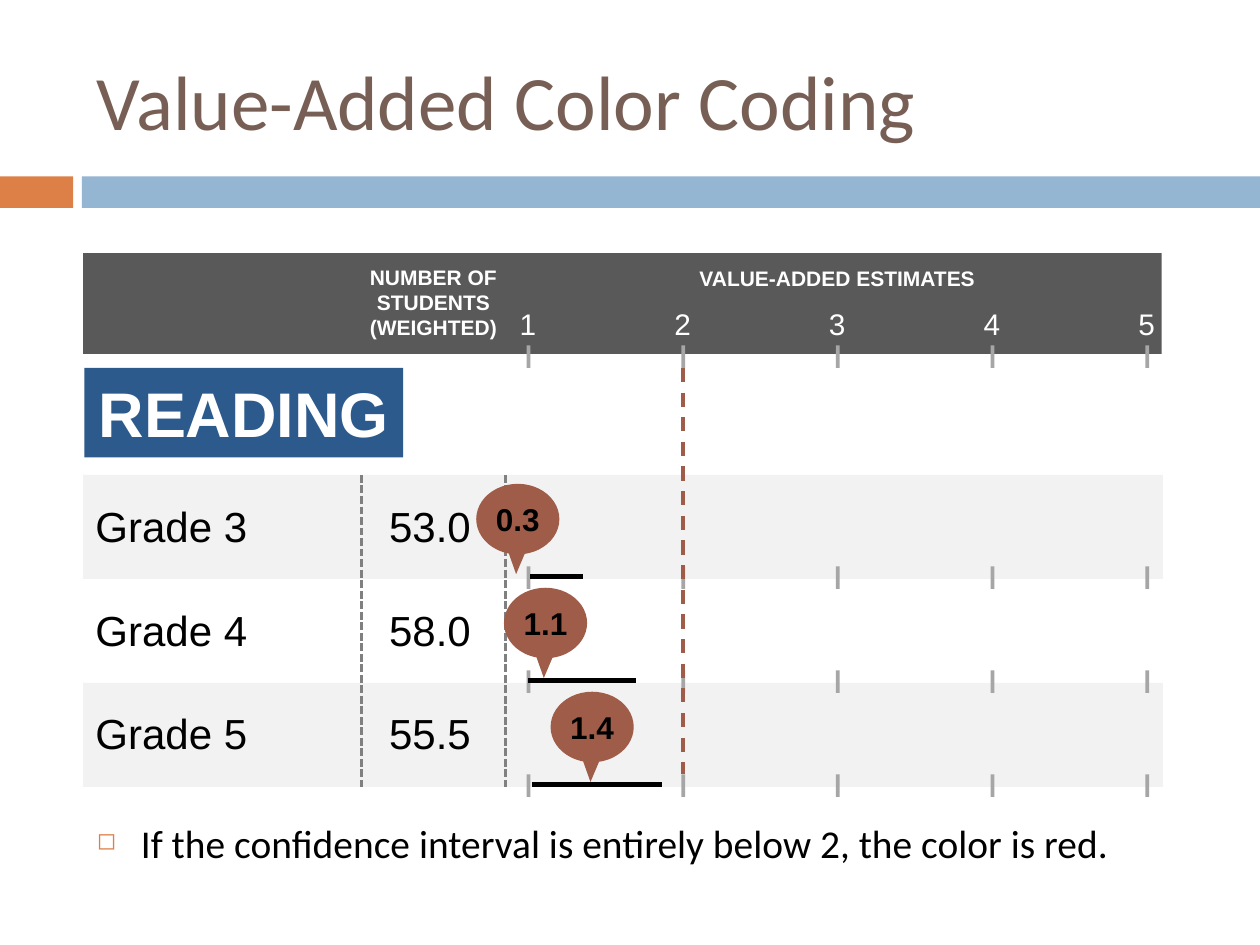
"""Build the value-added color coding slide."""
from lxml.etree import SubElement
from pptx import Presentation
from pptx.dml.color import RGBColor
from pptx.enum.dml import MSO_LINE_DASH_STYLE as Dash
from pptx.enum.shapes import MSO_CONNECTOR as Connector, MSO_SHAPE as Shape
from pptx.enum.text import MSO_ANCHOR as Anchor, PP_ALIGN as Align
from pptx.oxml.ns import qn
from pptx.util import Inches, Pt

WHITE, BLACK = RGBColor(255, 255, 255), RGBColor(0, 0, 0)
BROWN, ORANGE = RGBColor(0x77, 0x5F, 0x55), RGBColor(0xDD, 0x80, 0x47)
SKY, NAVY = RGBColor(0x94, 0xB6, 0xD2), RGBColor(0x2C, 0x5A, 0x8C)
CHARCOAL, PALE = RGBColor(0x59, 0x59, 0x59), RGBColor(0xF2, 0xF2, 0xF2)
TICK_GREY, RULE_GREY = RGBColor(0xA6, 0xA6, 0xA6), RGBColor(0x80, 0x80, 0x80)
RED = RGBColor(0x9F, 0x5C, 0x49)

TITLE = "Value-Added Color Coding"
SUBJECT = "READING"
STUDENTS_HEAD = ["NUMBER OF", "STUDENTS", "(WEIGHTED)"]
ESTIMATES_HEAD = "VALUE-ADDED ESTIMATES"
SCALE = ["1", "2", "3", "4", "5"]
GRADES = [
    {"name": "Grade 3", "students": "53.0", "estimate": "0.3", "callout": 3.78, "interval": (4.21, 4.63)},
    {"name": "Grade 4", "students": "58.0", "estimate": "1.1", "callout": 4.00, "interval": (4.19, 5.05)},
    {"name": "Grade 5", "students": "55.5", "estimate": "1.4", "callout": 4.37, "interval": (4.22, 5.25)},
]
NOTE = "If the confidence interval is entirely below 2, the color is red."

BANDS = [
    ((0, 1.4, 0.58, 0.25), ORANGE),
    ((0.65, 1.4, 9.35, 0.25), SKY),
    ((0.66, 2.01, 8.56, 0.8), CHARCOAL),
]
DIVIDERS = [2.87, 4.01]
TABLE_LEFT, TABLE_WIDTH = 0.66, 8.57
ROWS_TOP, ROW_PITCH = 3.77, 1.65 / 2
TICK_LEFT, TICK_STEP = 4.18, 4.91 / 4
HEADER_TICK_TOP = 2.74

HEAD_FONT = {"size": Pt(12), "name": "Arial", "bold": True}
SCALE_FONT = {"size": Pt(17), "name": "Arial"}
GRADE_FONT = {"size": Pt(24), "name": "Arial"}
SUBJECT_FONT = {"size": Pt(36), "name": "Arial", "bold": True}
ESTIMATE_FONT = {"size": Pt(18), "name": "Arial", "bold": True}
TITLE_FONT = {"size": Pt(44), "name": "Calibri"}
NOTE_FONT = {"size": Pt(22.5), "name": "Calibri"}


def write(shape, lines, font, color, align=Align.LEFT, anchor=Anchor.TOP, wrap=True):
    frame = shape.text_frame
    frame.word_wrap, frame.vertical_anchor = wrap, anchor
    for index, line in enumerate(lines):
        para = frame.add_paragraph() if index else frame.paragraphs[0]
        para.alignment = align
        span = para.add_run()
        span.text = line
        for key, value in font.items():
            setattr(span.font, key, value)
        span.font.color.rgb = color


def add_text(page, place, lines, font, color, **layout):
    box = page.shapes.add_textbox(*map(Inches, place))
    write(box, lines, font, color, **layout)
    return box


def add_block(page, place, fill, kind=Shape.RECTANGLE):
    block = page.shapes.add_shape(kind, *map(Inches, place))
    block.shadow.inherit = False
    block.fill.solid()
    block.fill.fore_color.rgb = fill
    block.line.fill.background()
    return block


def add_line(page, ends, color, width, dash=None):
    line = page.shapes.add_connector(Connector.STRAIGHT, *map(Inches, ends))
    line.line.color.rgb = color
    line.line.width = Pt(width)
    if dash:
        line.line.dash_style = dash
    SubElement(line.element.spPr, qn("a:effectLst"))
    return line


def add_ticks(page, top):
    return [
        add_block(page, (TICK_LEFT + TICK_STEP * index, top, 0.03, 0.18), TICK_GREY)
        for index in range(len(SCALE))
    ]


def add_header(page):
    for place, fill in BANDS:
        add_block(page, place, fill)
    add_text(page, (0.67, 0.25, 8.92, 1.08), [TITLE], TITLE_FONT, BROWN, anchor=Anchor.MIDDLE)
    subject = add_block(page, (0.67, 2.92, 2.53, 0.71), NAVY)
    write(subject, [SUBJECT], SUBJECT_FONT, WHITE, align=Align.CENTER)
    centred = {"align": Align.CENTER, "wrap": False}
    add_text(page, (2.83, 2.05, 1.22, 0.71), STUDENTS_HEAD, HEAD_FONT, WHITE, **centred)
    add_text(page, (5.44, 2.06, 2.41, 0.3), [ESTIMATES_HEAD], HEAD_FONT, WHITE, **centred)
    for index, number in enumerate(SCALE):
        left = TICK_LEFT - 0.16 + TICK_STEP * index
        add_text(page, (left, 2.38, 0.34, 0.39), [number], SCALE_FONT, WHITE, **centred)


def add_grades(page):
    tops = [ROWS_TOP + ROW_PITCH * index for index in range(len(GRADES))]
    for top in tops[::2]:
        add_block(page, (TABLE_LEFT, top, TABLE_WIDTH, ROW_PITCH), PALE)
    for x in DIVIDERS:
        add_line(page, (x, ROWS_TOP, x, tops[-1] + ROW_PITCH), RULE_GREY, 1.5, Dash.SQUARE_DOT)
    header_ticks = add_ticks(page, HEADER_TICK_TOP)
    for top, grade in zip(tops, GRADES):
        row_ticks = add_ticks(page, top + ROW_PITCH - 0.1)
        add_text(page, (TABLE_LEFT, top + 0.15, 2.06, 0.5), [grade["name"]], GRADE_FONT, BLACK)
        add_text(page, (2.99, top + 0.15, 0.87, 0.5), [grade["students"]], GRADE_FONT, BLACK)

    target = add_line(page, (5.42, 2.92, 5.42, 6.15), RED, 2, Dash.DASH)
    goal = SCALE.index("2")
    target.begin_connect(header_ticks[goal], 2)
    target.end_connect(row_ticks[goal], 0)

    for top, grade in zip(tops, GRADES):
        start, end = grade["interval"]
        y = top + ROW_PITCH - 0.02
        add_line(page, (start, y, end, y), BLACK, 3)
        place = (grade["callout"], top + 0.07, 0.66, 0.56)
        callout = add_block(page, place, RED, Shape.OVAL_CALLOUT)
        callout.adjustments[0], callout.adjustments[1] = -0.02, 0.78
        for side in ("left", "top", "right", "bottom"):
            setattr(callout.text_frame, f"margin_{side}", 0)
        write(callout, [grade["estimate"]], ESTIMATE_FONT, BLACK, Align.CENTER, Anchor.MIDDLE)


def add_note(page):
    box = add_text(page, (0.67, 6.45, 8.92, 0.41), [NOTE], NOTE_FONT, BLACK)
    props = box.text_frame.paragraphs[0]._p.get_or_add_pPr()
    props.set("marL", str(Inches(0.35)))
    props.set("indent", str(-Inches(0.35)))
    color = SubElement(props, qn("a:buClr"))
    SubElement(color, qn("a:srgbClr"), val=str(ORANGE))
    SubElement(props, qn("a:buSzPct"), val="60000")
    SubElement(props, qn("a:buChar"), char="◻")


def main():
    deck = Presentation()
    deck.slide_width, deck.slide_height = Inches(10), Inches(7.5)
    page = deck.slides.add_slide(deck.slide_layouts[6])
    add_header(page)
    add_grades(page)
    add_note(page)
    deck.save("out.pptx")


if __name__ == "__main__":
    main()
